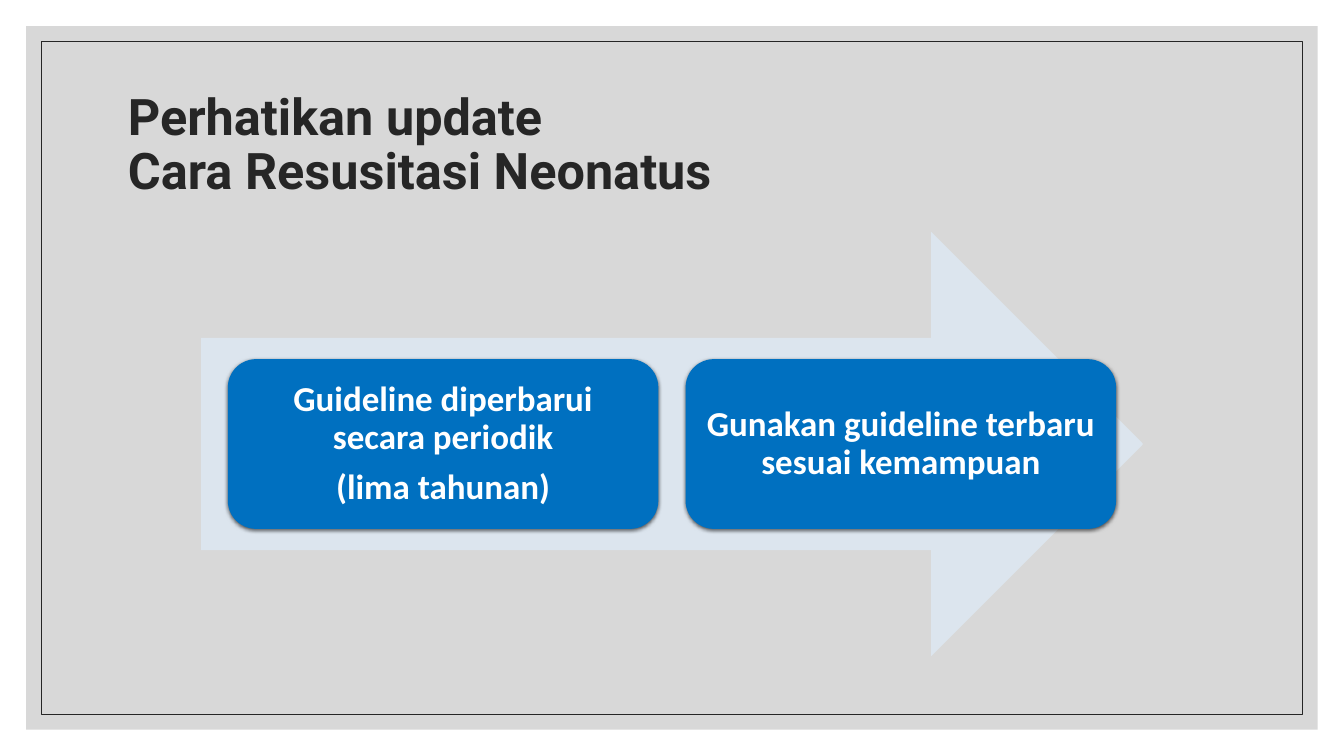
from lxml.etree import SubElement
from pptx import Presentation
from pptx.dml.color import RGBColor as Color
from pptx.enum.shapes import MSO_SHAPE as Shape
from pptx.enum.text import MSO_ANCHOR as Anchor, PP_ALIGN as Align
from pptx.oxml import parse_xml
from pptx.oxml.ns import nsdecls, qn
from pptx.util import Inches, Pt

THEME = {
    "panel": Color.from_string("BFBFBF"),
    "ink": Color.from_string("262626"),
    "arrow": ("DCE5EE", "DAE3ED"),
    "card": Color.from_string("0070C0"),
    "card_text": Color.from_string("FFFFFF"),
    "title_font": "Roboto",
    "card_font": "Calibri",
    "title_size": Pt(36),
    "card_size": Pt(25),
    "card_space": Pt(8.75),
}
WIDTH, HEIGHT = Inches(13.33), Inches(7.5)
CARDS = [
    ["Guideline diperbarui secara periodik", "(lima tahunan)"],
    ["Gunakan guideline terbaru sesuai kemampuan"],
]
CARD_SHADOW = f"""<a:effectLst {nsdecls('a')}>
  <a:outerShdw blurRad="{Pt(3)}" dist="{Pt(1)}" dir="5400000" rotWithShape="0">
    <a:srgbClr val="000000"><a:alpha val="63000"/></a:srgbClr>
  </a:outerShdw>
</a:effectLst>"""


def add_plain_shape(kind, left, top, width, height):
    """Add a preset shape without shadow, fill or line."""
    shape = slide.shapes.add_shape(kind, left, top, width, height)
    shape.shadow.inherit = False
    shape.fill.background()
    shape.line.fill.background()
    return shape


def style_paragraph(paragraph, font_name, size, color):
    paragraph.line_spacing = 0.9
    paragraph.font.name = font_name
    paragraph.font.size = size
    paragraph.font.bold = True
    paragraph.font.color.rgb = color


presentation = Presentation()
presentation.slide_width, presentation.slide_height = WIDTH, HEIGHT
slide = presentation.slides.add_slide(presentation.slide_layouts[6])

# Grey panel and the thin frame inside it
panel_margin, frame_margin = Inches(0.26), Inches(0.41)
panel, frame = [
    add_plain_shape(Shape.RECTANGLE, margin, margin, WIDTH - 2 * margin, HEIGHT - 2 * margin)
    for margin in (panel_margin, frame_margin)
]
panel.fill.solid()
panel.fill.fore_color.rgb = THEME["panel"]
panel_color = panel._element.spPr.find(qn("a:solidFill"))[0]
SubElement(panel_color, qn("a:alpha"), val="60000")
frame.line.color.rgb = THEME["ink"]
frame.line.width = Pt(0.5)

# Title
title = slide.shapes.add_textbox(Inches(1.17), Inches(0.7), Inches(11), Inches(1.5))
title.text_frame.word_wrap = True
title.text_frame.vertical_anchor = Anchor.MIDDLE
title.text_frame.text = "Perhatikan update\vCara Resusitasi Neonatus"
style_paragraph(title.text_frame.paragraphs[0], THEME["title_font"],
                THEME["title_size"], THEME["ink"])

# Arrow behind the cards
arrow_left, arrow_width = Inches(1.99), Inches(9.35)
arrow_top, arrow_height = Inches(2.3), Inches(4.21)
arrow = add_plain_shape(Shape.RIGHT_ARROW, arrow_left, arrow_top, arrow_width, arrow_height)
arrow.fill.gradient()
arrow.fill.gradient_angle = 270
for stop, color in zip(arrow.fill.gradient_stops, THEME["arrow"]):
    stop.color.rgb = Color.from_string(color)

# Cards, centred on the arrow with equal gaps
gap = Inches(0.27)
card_width = (arrow_width - (len(CARDS) + 1) * gap) // len(CARDS)
card_height = int(arrow_height * 0.4)
card_top = arrow_top + (arrow_height - card_height) // 2
for column, lines in enumerate(CARDS):
    card_left = arrow_left + gap + column * (card_width + gap)
    card = add_plain_shape(Shape.ROUNDED_RECTANGLE, card_left, card_top, card_width, card_height)
    card.fill.solid()
    card.fill.fore_color.rgb = THEME["card"]
    properties = card._element.spPr
    properties.replace(properties.find(qn("a:effectLst")), parse_xml(CARD_SHADOW))

    text_frame = card.text_frame
    text_frame.word_wrap = True
    text_frame.vertical_anchor = Anchor.MIDDLE
    text_frame.margin_left = text_frame.margin_right = Inches(0.1)
    text_frame.margin_top = text_frame.margin_bottom = Inches(0.1)
    text_frame.text = "\n".join(lines)
    for paragraph in text_frame.paragraphs:
        paragraph.alignment = Align.CENTER
        paragraph.space_after = THEME["card_space"]
        style_paragraph(paragraph, THEME["card_font"], THEME["card_size"], THEME["card_text"])

presentation.save("out.pptx")
